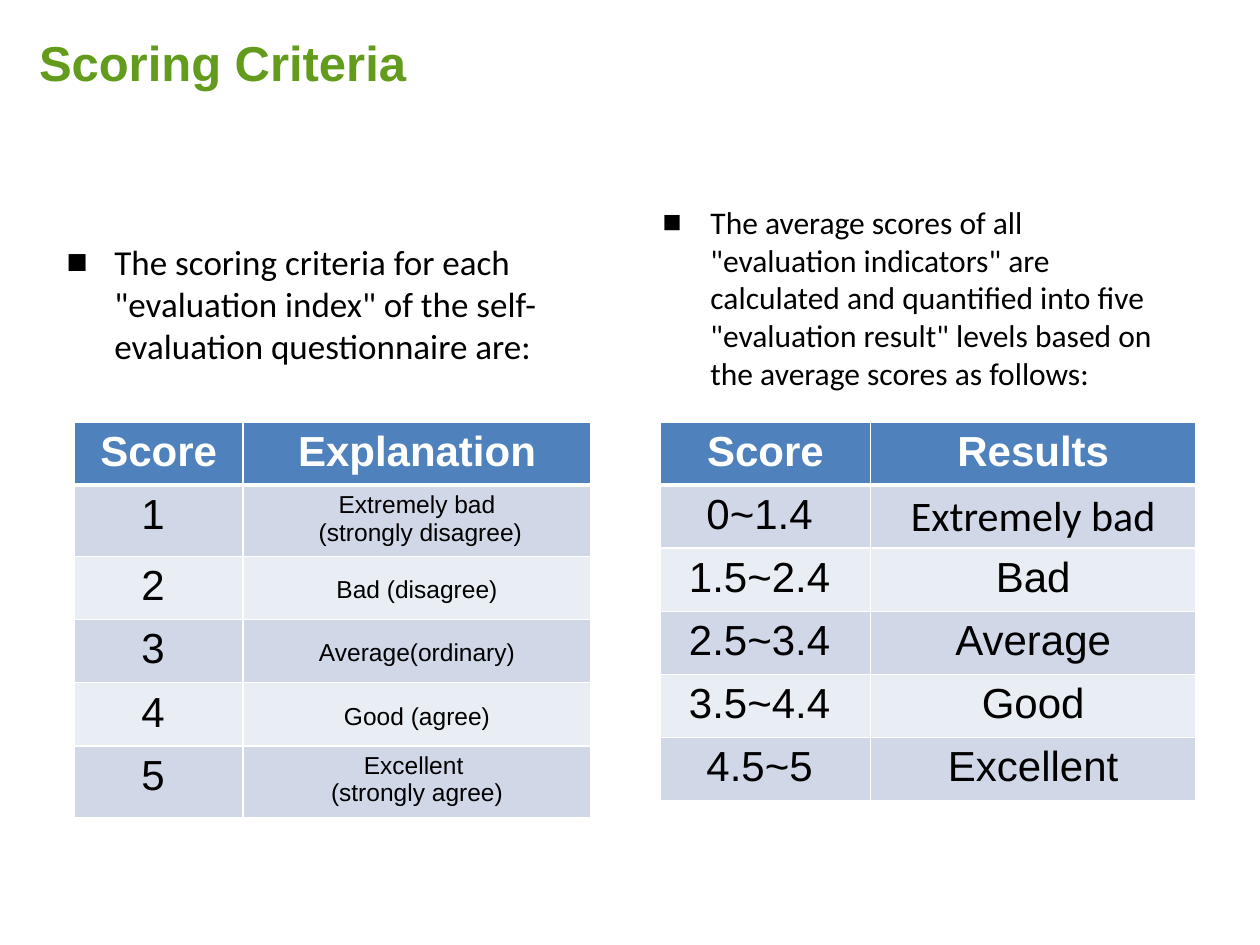
from dataclasses import dataclass

from lxml.etree import SubElement
from pptx import Presentation
from pptx.dml.color import RGBColor
from pptx.enum.text import MSO_ANCHOR, PP_ALIGN as Align
from pptx.oxml.ns import qn
from pptx.util import Inches, Pt


@dataclass(frozen=True)
class Theme:
    """Colours, fonts and type sizes of the slide."""
    green: str = "639B1C"
    black: str = "000000"
    white: str = "FFFFFF"
    header: str = "4F81BD"
    bands: tuple = ("D0D8E8", "E9EDF4")
    sans: str = "Arial"
    body: str = "Calibri"
    title_size: int = 28
    table_size: int = 24
    note_size: int = 14


THEME = Theme()
LEFT_COLUMN, RIGHT_COLUMN = 0.59, 5.24
TABLE_TOP, ROW = 3.35, 0.5
TALL_ROW = 0.56

SCORES = [
    ("Score", "Explanation"),
    ("1 ", "Extremely bad\n (strongly disagree)"),
    ("2 ", "Bad (disagree)"),
    ("3 ", "Average(ordinary)"),
    ("4 ", "Good (agree)"),
    ("5 ", "Excellent \n(strongly agree)"),
]
RESULTS = [
    ("Score", "Results"),
    ("0~1.4 ", "Extremely bad"),
    ("1.5~2.4 ", "Bad"),
    ("2.5~3.4 ", "Average"),
    ("3.5~4.4 ", "Good"),
    ("4.5~5 ", "Excellent"),
]


def write(frame, text, size, font=THEME.sans, color=THEME.black, bold=False,
          align=Align.LEFT, spacing=None, bullet=None):
    """Fill a text frame, one paragraph per line of text."""
    frame.word_wrap = True
    frame.text = text
    for paragraph in frame.paragraphs:
        paragraph.alignment = align
        if spacing:
            paragraph.line_spacing = spacing
        if bullet:
            properties = paragraph._p.get_or_add_pPr()
            properties.set("marL", str(Inches(0.38)))
            properties.set("indent", str(Inches(-0.38)))
            SubElement(properties, qn("a:buFont"), typeface=THEME.sans)
            SubElement(properties, qn("a:buChar"), char=bullet)
        for run in paragraph.runs:
            run.font.size = Pt(size)
            run.font.name = font
            run.font.bold = bold
            run.font.color.rgb = RGBColor.from_string(color)


def add_title(slide, text):
    """Place and format the title placeholder."""
    title = slide.shapes.title
    title.left, title.top, title.width, title.height = map(Inches, (0.21, 0.21, 9.12, 0.57))
    title.text_frame.vertical_anchor = MSO_ANCHOR.MIDDLE
    write(title.text_frame, text, THEME.title_size, color=THEME.green, bold=True)


def add_bullet(slide, text, left, top, width, height, size):
    """Add a bulleted introduction above a table."""
    box = slide.shapes.add_textbox(*map(Inches, (left, top, width, height)))
    write(box.text_frame, text, size, font=THEME.body, bullet="■")


def set_borders(cell, bottom_width):
    """Draw white lines round a cell."""
    properties = cell._tc.get_or_add_tcPr()
    sides = {"a:lnL": 1, "a:lnR": 1, "a:lnT": 1, "a:lnB": bottom_width}
    for position, (side, width) in enumerate(sides.items()):
        line = SubElement(properties, qn(side), w=str(Pt(width)))
        fill = SubElement(line, qn("a:solidFill"))
        SubElement(fill, qn("a:srgbClr"), val=THEME.white)
        properties.insert(position, line)


def add_score_table(slide, rows, left, widths, cell_format):
    """Add a banded table; cell_format gives overrides for a body cell."""
    heights = [TALL_ROW if "\n" in row[1] else ROW for row in rows]
    area = map(Inches, (left, TABLE_TOP, sum(widths), sum(heights)))
    table = slide.shapes.add_table(len(rows), len(widths), *area).table
    for column, width in zip(table.columns, widths):
        column.width = Inches(width)
    for r, (values, height) in enumerate(zip(rows, heights)):
        table.rows[r].height = Inches(height)
        is_header = r == 0
        fill = THEME.header if is_header else THEME.bands[(r - 1) % 2]
        for c, value in enumerate(values):
            cell = table.cell(r, c)
            cell.fill.solid()
            cell.fill.fore_color.rgb = RGBColor.from_string(fill)
            set_borders(cell, 3 if is_header else 1)
            style = {"size": THEME.table_size, "align": Align.CENTER}
            if is_header:
                style.update(color=THEME.white, bold=True)
            else:
                style.update(cell_format(r, c, value))
            write(cell.text_frame, value, **style)


def explanation_format(row, column, value):
    """Set explanations small, with open spacing on single lines."""
    if column == 0:
        return {}
    return {"size": THEME.note_size, "spacing": None if "\n" in value else 1.5}


def result_format(row, column, value):
    """Set the first result in the body font."""
    return {"font": THEME.body} if (row, column) == (1, 1) else {}


def main():
    """Build the scoring criteria slide."""
    deck = Presentation()
    deck.slide_width, deck.slide_height = Inches(10), Inches(7.5)
    slide = deck.slides.add_slide(deck.slide_layouts[5])
    add_title(slide, "Scoring Criteria")
    add_bullet(slide, 'The scoring criteria for each "evaluation index" of the '
               "self-evaluation questionnaire are:", 0.43, 1.86, 4.09, 1.11, size=20)
    add_score_table(slide, SCORES, LEFT_COLUMN, (1.34, 2.76), explanation_format)
    add_bullet(slide, 'The average scores of all "evaluation indicators" are calculated '
               'and quantified into five "evaluation result" levels based on the '
               "average scores as follows:", 5.16, 1.56, 4.25, 1.62, size=18)
    add_score_table(slide, RESULTS, RIGHT_COLUMN, (1.67, 2.58), result_format)
    deck.save("out.pptx")


if __name__ == "__main__":
    main()
